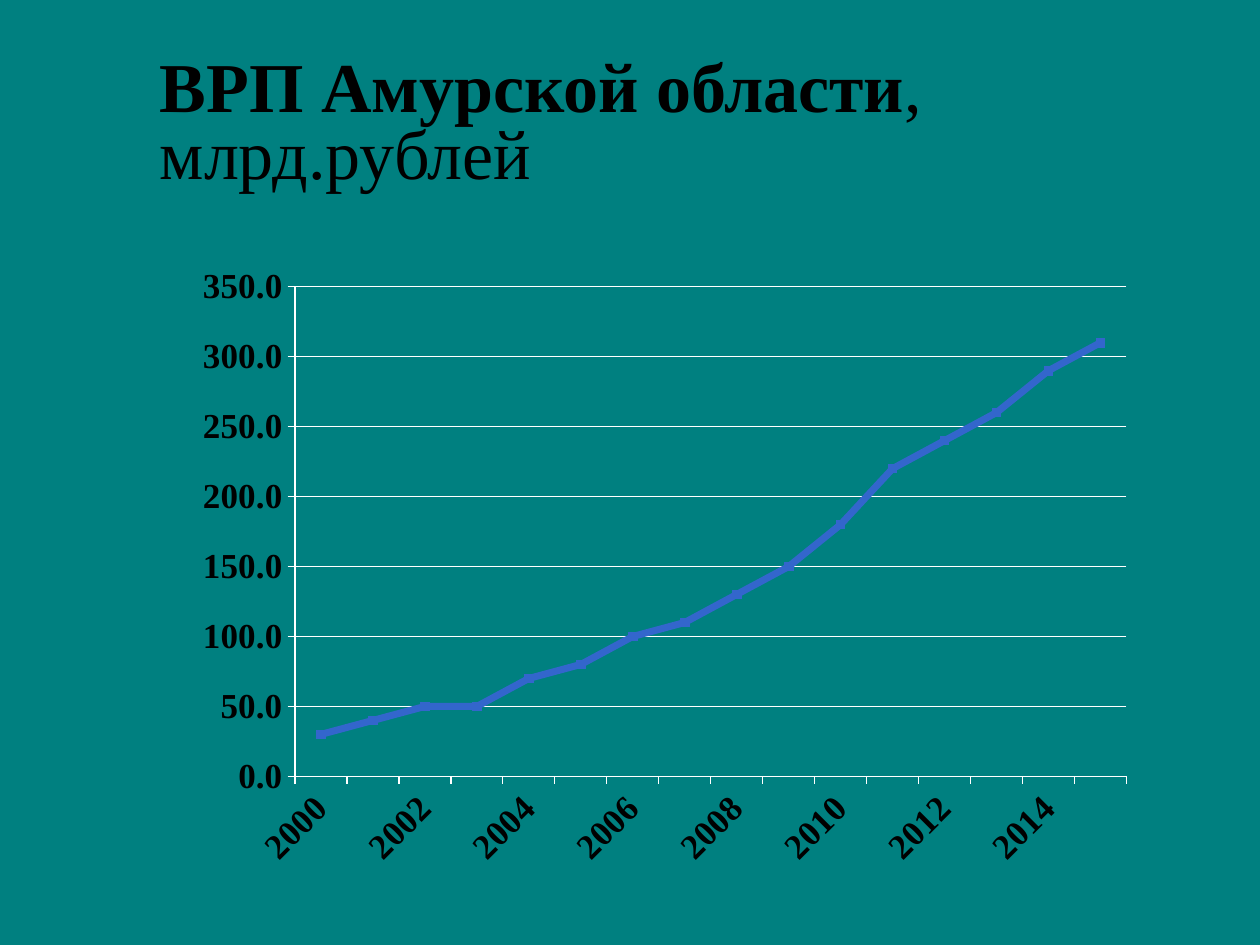
from dataclasses import dataclass

from lxml import etree
from pptx import Presentation
from pptx.chart.data import CategoryChartData
from pptx.dml.color import RGBColor
from pptx.enum.chart import XL_CHART_TYPE, XL_MARKER_STYLE, XL_TICK_MARK
from pptx.enum.text import MSO_ANCHOR
from pptx.oxml.ns import qn
from pptx.util import Pt


@dataclass(frozen=True)
class Theme:
    background: RGBColor = RGBColor(0x00, 0x80, 0x80)
    text: RGBColor = RGBColor(0x00, 0x00, 0x00)
    grid: RGBColor = RGBColor(0xFF, 0xFF, 0xFF)
    series: RGBColor = RGBColor(0x33, 0x66, 0xCC)
    font: str = "Times New Roman"
    title_size: Pt = Pt(40)
    axis_size: Pt = Pt(20)
    chart_size: Pt = Pt(10)


THEME = Theme()
FIRST_YEAR = 2000
REGIONAL_PRODUCT = (30, 40, 50, 50, 70, 80, 100, 110,
                    130, 150, 180, 220, 240, 260, 290, 310)
PLOT_AREA = {"x": 0.115, "y": 0.05, "w": 0.864, "h": 0.784}


def apply_format(target, values):
    for name, value in values.items():
        setattr(target, name, value)


def format_font(font, size, color, bold):
    apply_format(font, {"name": THEME.font, "size": size, "bold": bold})
    font.color.rgb = color


def format_line(line, color, width):
    line.color.rgb = color
    line.width = width


def place_plot_area(chart):
    plot_area = chart._chartSpace.chart.plotArea
    for layout in plot_area.findall(qn("c:layout")):
        plot_area.remove(layout)
    layout = etree.Element(qn("c:layout"))
    plot_area.insert(0, layout)
    manual = etree.SubElement(layout, qn("c:manualLayout"))
    settings = {"layoutTarget": "inner", "xMode": "edge", "yMode": "edge", **PLOT_AREA}
    for name, value in settings.items():
        etree.SubElement(manual, qn(f"c:{name}")).set("val", str(value))


def add_title(slide, left, top, width, height):
    frame = slide.shapes.add_textbox(left, top, width, height).text_frame
    apply_format(frame, {"word_wrap": True, "vertical_anchor": MSO_ANCHOR.BOTTOM})
    paragraph = frame.paragraphs[0]
    paragraph.line_spacing = 0.8
    for text, bold in (("ВРП Амурской области", True), (", млрд.рублей", False)):
        run = paragraph.add_run()
        run.text = text
        format_font(run.font, THEME.title_size, THEME.text, bold)


def format_axis(axis):
    apply_format(axis, {"major_tick_mark": XL_TICK_MARK.OUTSIDE,
                        "minor_tick_mark": XL_TICK_MARK.NONE})
    format_font(axis.tick_labels.font, THEME.axis_size, THEME.text, True)
    format_line(axis.format.line, THEME.grid, Pt(0.75))


def add_line_chart(slide, left, top, width, height):
    data = CategoryChartData(number_format="0.0")
    data.categories = [str(FIRST_YEAR + step) for step in range(len(REGIONAL_PRODUCT))]
    data.add_series("Series 1", REGIONAL_PRODUCT)
    chart = slide.shapes.add_chart(
        XL_CHART_TYPE.LINE_MARKERS, left, top, width, height, data).chart
    apply_format(chart, {"has_legend": False, "has_title": False})
    format_font(chart.font, THEME.chart_size, THEME.grid, False)
    place_plot_area(chart)

    for axis in (chart.category_axis, chart.value_axis):
        format_axis(axis)
    chart.category_axis.tick_labels.font._element.getparent().getparent().getparent().find(
        qn("a:bodyPr")).set("rot", "-2700000")
    apply_format(chart.value_axis, {"minimum_scale": 0, "maximum_scale": 350,
                                    "major_unit": 50, "has_major_gridlines": True})
    apply_format(chart.value_axis.tick_labels, {"number_format": "0.0",
                                                "number_format_is_linked": False})
    format_line(chart.value_axis.major_gridlines.format.line, THEME.grid, Pt(0.75))

    plot = chart.plots[0]
    plot.vary_by_categories = False
    series = plot.series[0]
    series.smooth = False
    format_line(series.format.line, THEME.series, Pt(4))
    apply_format(series.marker, {"style": XL_MARKER_STYLE.SQUARE, "size": 5})
    series.marker.format.fill.solid()
    series.marker.format.fill.fore_color.rgb = THEME.series
    format_line(series.marker.format.line, THEME.series, Pt(0.75))


def main():
    presentation = Presentation()
    apply_format(presentation, {"slide_width": Pt(720), "slide_height": Pt(540)})
    slide = presentation.slides.add_slide(presentation.slide_layouts[6])
    slide.background.fill.solid()
    slide.background.fill.fore_color.rgb = THEME.background
    add_title(slide, Pt(84.24), Pt(21.6), Pt(617.76), Pt(92.4))
    add_line_chart(slide, Pt(105.3), Pt(146), Pt(550), Pt(357))
    presentation.save("out.pptx")


if __name__ == "__main__":
    main()
